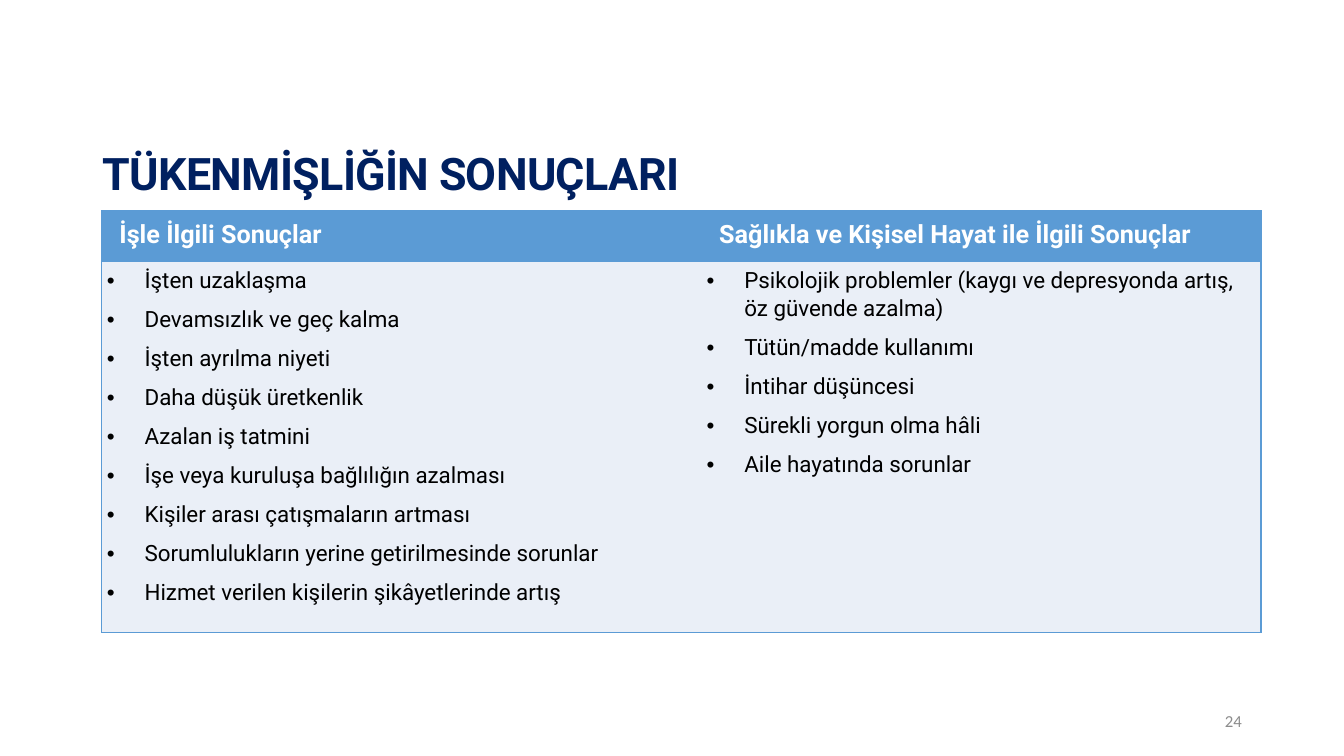
from lxml.etree import SubElement as Sub
from pptx import Presentation
from pptx.dml.color import RGBColor as Rgb
from pptx.enum.text import MSO_ANCHOR as Anchor, PP_ALIGN as Align
from pptx.oxml.ns import qn
from pptx.util import Pt

HUES = {"navy": "002060", "blue": "5B9BD5", "pale": "EAEFF7",
        "white": "FFFFFF", "black": "000000", "gray": "8C8C8C"}

COLS = [
    ("İşle İlgili Sonuçlar", 428.4, [
        "İşten uzaklaşma",
        "Devamsızlık ve geç kalma",
        "İşten ayrılma niyeti",
        "Daha düşük üretkenlik",
        "Azalan iş tatmini",
        "İşe veya kuruluşa bağlılığın azalması",
        "Kişiler arası çatışmaların artması",
        "Sorumlulukların yerine getirilmesinde sorunlar",
        "Hizmet verilen kişilerin şikâyetlerinde artış",
    ]),
    ("Sağlıkla ve Kişisel Hayat ile İlgili Sonuçlar", 399.6, [
        "Psikolojik problemler (kaygı ve depresyonda artış, öz güvende azalma)",
        "Tütün/madde kullanımı",
        "İntihar düşüncesi",
        "Sürekli yorgun olma hâli",
        "Aile hayatında sorunlar",
    ]),
]
ROWS = (36, 265.4)


def style(run, size, hue, bold=False, face="Roboto"):
    font = run.font
    font.name, font.size, font.bold = face, Pt(size), bold
    font.color.rgb = Rgb.from_string(HUES[hue])


def add_text(slide, box, text, size, hue, bold=False, face="Roboto",
             align=Align.LEFT):
    frame = slide.shapes.add_textbox(*map(Pt, box)).text_frame
    frame.word_wrap = True
    frame.vertical_anchor = Anchor.MIDDLE
    frame.text = text
    para = frame.paragraphs[0]
    para.alignment = align
    style(para.runs[0], size, hue, bold, face)
    return para


def add_title(slide, box, text):
    para = add_text(slide, box, text, 32, "navy", True)
    para.line_spacing = 0.9
    para.runs[0].font._element.set("spc", "-50")


def set_edges(cell, sides):
    """Draw the given sides in blue and leave the others without a line."""
    props = cell._tc.get_or_add_tcPr()
    for side in "LRTB":
        line = Sub(props, qn("a:ln" + side), w=str(Pt(1)))
        if side in sides:
            fill = Sub(line, qn("a:solidFill"))
            Sub(fill, qn("a:srgbClr"), val=HUES["blue"])
        else:
            Sub(line, qn("a:noFill"))


def fill_cell(cell, lines, head, sides):
    set_edges(cell, sides)
    cell.fill.solid()
    cell.fill.fore_color.rgb = Rgb.from_string(HUES["blue" if head else "pale"])
    cell.margin_left = cell.margin_right = Pt(3.6)
    cell.margin_top = cell.margin_bottom = Pt(3.6)
    cell.text_frame.text = "\n".join(lines)
    for para in cell.text_frame.paragraphs:
        props = para._p.get_or_add_pPr()
        props.set("marL", str(Pt(9 if head else 27)))
        props.set("indent", str(Pt(0 if head else -27)))
        if not head:
            Sub(props, qn("a:buFont"), typeface="Arial")
            Sub(props, qn("a:buChar"), char="•")
        para.line_spacing = 1.15 if head else 1.07
        para.space_after = Pt(8)
        style(para.runs[0], 18 if head else 16,
              "white" if head else "black", head)


def add_grid(slide, box):
    table = slide.shapes.add_table(len(ROWS), len(COLS), *map(Pt, box)).table
    for row, high in zip(table.rows, ROWS):
        row.height = Pt(high)
    for col, (head, wide, items) in enumerate(COLS):
        table.columns[col].width = Pt(wide)
        sides = "TB" + "LR"[col]
        fill_cell(table.cell(0, col), [head], True, sides)
        fill_cell(table.cell(1, col), items, False, sides)


def main():
    deck = Presentation()
    deck.slide_width, deck.slide_height = Pt(960), Pt(540)
    slide = deck.slides.add_slide(deck.slide_layouts[6])
    # Heading
    add_title(slide, (66.2, 73.4, 828, 104.4), "TÜKENMİŞLİĞİN SONUÇLARI")
    # Two columns of outcomes
    add_grid(slide, (72.7, 150.7, 828, sum(ROWS)))
    # Page number
    add_text(slide, (678.2, 500.4, 216, 28.8), "24", 12, "gray",
             face="Calibri", align=Align.RIGHT)
    deck.save("out.pptx")


if __name__ == "__main__":
    main()
